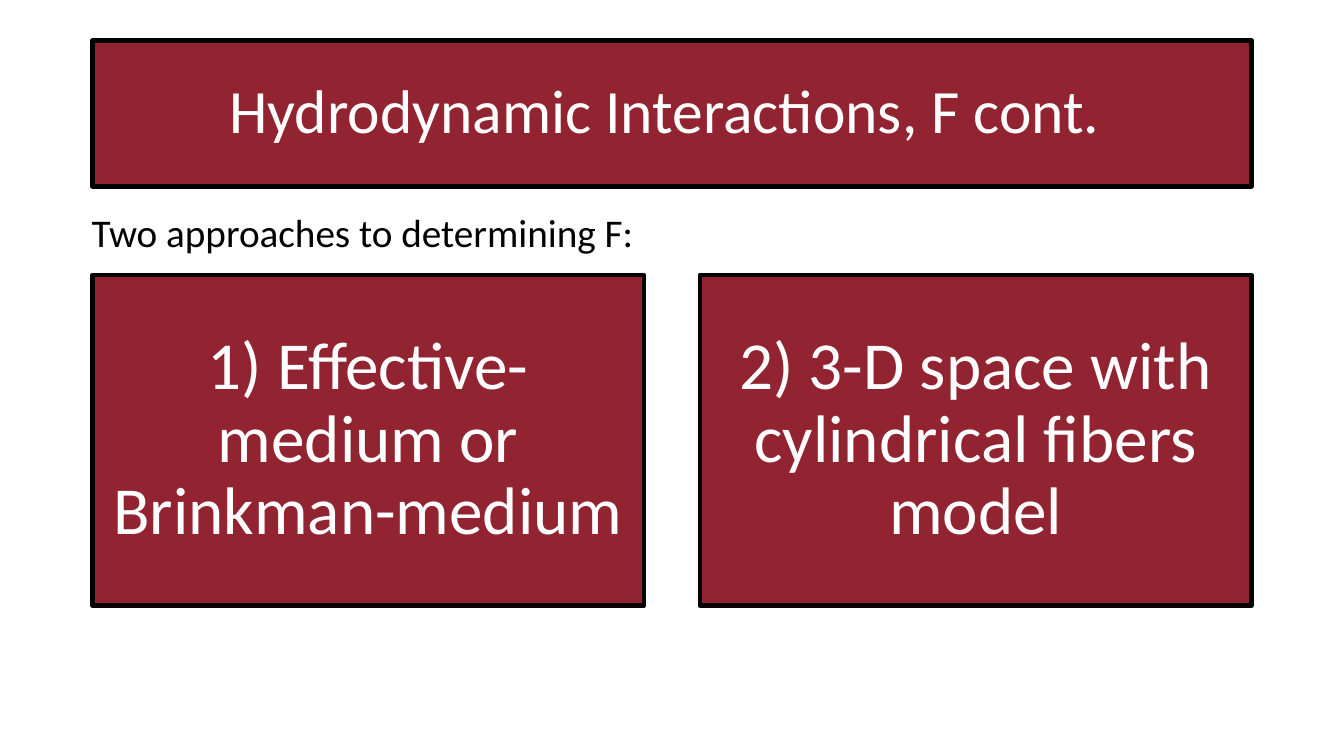
"""Builds a slide that names two approaches to determining F."""
from pptx import Presentation
from pptx.dml.color import RGBColor
from pptx.enum.shapes import MSO_SHAPE
from pptx.enum.text import MSO_ANCHOR, PP_ALIGN
from pptx.util import Cm, Pt

RECT = MSO_SHAPE.RECTANGLE
MID, TOP = MSO_ANCHOR.MIDDLE, MSO_ANCHOR.TOP
MIDDLE, LEFT = PP_ALIGN.CENTER, PP_ALIGN.LEFT

TITLE = "Hydrodynamic Interactions, F cont. "
LEAD = "Two approaches to determining F:"
CARDS = ["1) Effective-medium or Brinkman-medium ",
         "2) 3-D space with cylindrical fibers model"]

FONT = "Calibri"
RED, BLACK, WHITE = "922330", "000000", "FFFFFF"
EDGE, WIDTH = 2.33, 29.21
CARD_W, CARD_H, CARD_Y = 13.9, 8.33, 6.93
STEP = (WIDTH - CARD_W * len(CARDS)) / (len(CARDS) - 1) + CARD_W


def color(target, code):
    target.rgb = RGBColor.from_string(code)


def write(shape, text, size, code, align, anchor, inset=(0.25, 0.13)):
    frame = shape.text_frame
    frame.word_wrap = True
    frame.vertical_anchor = anchor
    frame.margin_left = frame.margin_right = Cm(inset[0])
    frame.margin_top = frame.margin_bottom = Cm(inset[1])
    para = frame.paragraphs[0]
    para.alignment = align
    if align == MIDDLE:
        para.line_spacing = 0.9
    run = para.add_run()
    run.text = text
    run.font.name = FONT
    run.font.size = Pt(size)
    color(run.font.color, code)


def panel(slide, box, text, size, **style):
    shape = slide.shapes.add_shape(RECT, *map(Cm, box))
    shape.shadow.inherit = False
    shape.fill.solid()
    color(shape.fill.fore_color, RED)
    color(shape.line.color, BLACK)
    shape.line.width = Pt(3)
    write(shape, text, size, WHITE, MIDDLE, MID, **style)


def main():
    deck = Presentation()
    deck.slide_width, deck.slide_height = Cm(33.87), Cm(19.05)
    slide = deck.slides.add_slide(deck.slide_layouts[6])
    panel(slide, (EDGE, 1.02, WIDTH, 3.68), TITLE, 44)
    for i, text in enumerate(CARDS):
        box = (EDGE + i * STEP, CARD_Y, CARD_W, CARD_H)
        panel(slide, box, text, 48, inset=(0.5, 0.5))
    lead = slide.shapes.add_textbox(Cm(2.06), Cm(5.13), Cm(16.41), Cm(2.24))
    write(lead, LEAD, 28, BLACK, LEFT, TOP)
    deck.save("out.pptx")


if __name__ == "__main__":
    main()
